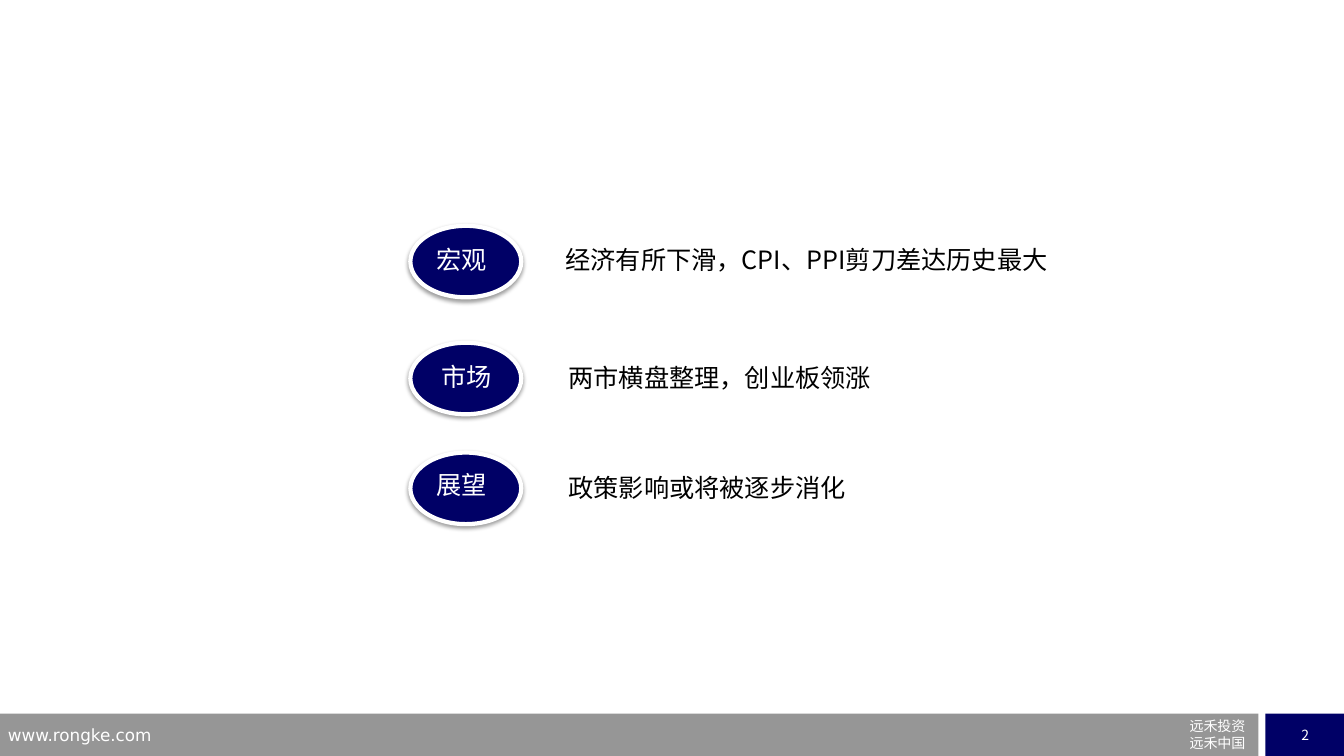
from dataclasses import dataclass

import pptx
import pptx.dml.color
import pptx.enum.shapes
import pptx.enum.text
import pptx.oxml
import pptx.oxml.ns
import pptx.util
from pptx.util import Inches

SHAPES = pptx.enum.shapes.MSO_SHAPE
ALIGN = pptx.enum.text.PP_ALIGN
ANCHOR = pptx.enum.text.MSO_ANCHOR


@dataclass(frozen=True)
class Theme:
    navy: str = "000066"
    grey: str = "969696"
    white: str = "FFFFFF"
    black: str = "000000"
    body_size: int = 18
    address_size: int = 12
    small_size: int = 10
    outline: int = 3
    body_font: str = "Noto Sans CJK SC"
    footer_font: str = "DejaVu Sans"


THEME = Theme()

# Oval top, label left and top, text left and top within the row, label, text
AGENDA = [
    (2.24, 0.16, 0.13, 1.44, 0.13, "宏观", "经济有所下滑，CPI、PPI剪刀差达历史最大"),
    (3.40, 0.21, 0.14, 1.47, 0.15, "市场", "两市横盘整理，创业板领涨"),
    (4.49, 0.16, 0.12, 1.47, 0.15, "展望", "政策影响或将被逐步消化"),
]


def color(value):
    return pptx.dml.color.RGBColor.from_string(value)


def write(paragraph, text, size, font, ink, align=ALIGN.LEFT):
    paragraph.alignment = align
    run = paragraph.add_run()
    run.text = text
    run.font.size = pptx.util.Pt(size)
    run.font.name = font
    run.font.color.rgb = color(ink)
    east_asian = pptx.oxml.parse_xml(
        f'<a:ea {pptx.oxml.ns.nsdecls("a")} typeface="{THEME.body_font}"/>')
    run.font._element.find(pptx.oxml.ns.qn("a:latin")).addnext(east_asian)


def add_text(slide, box, lines, size, font, ink, align=ALIGN.LEFT):
    shape = slide.shapes.add_textbox(*map(Inches, box))
    frame = shape.text_frame
    frame.word_wrap = True
    for index, line in enumerate(lines):
        paragraph = frame.add_paragraph() if index else frame.paragraphs[0]
        write(paragraph, line, size, font, ink, align)


def add_block(slide, kind, box, fill):
    shape = slide.shapes.add_shape(kind, *map(Inches, box))
    shape.shadow.inherit = False
    shape.fill.solid()
    shape.fill.fore_color.rgb = color(fill)
    shape.line.fill.background()
    return shape


def add_soft_shadow(shape):
    effects = shape._element.spPr.find(pptx.oxml.ns.qn("a:effectLst"))
    effects.append(pptx.oxml.parse_xml(
        f'<a:outerShdw {pptx.oxml.ns.nsdecls("a")} blurRad="40000" dist="20000" '
        f'dir="5400000" rotWithShape="0"><a:srgbClr val="{THEME.black}">'
        '<a:alpha val="38000"/></a:srgbClr></a:outerShdw>'))


def add_agenda_row(slide, left, top, label_at, text_at, label, text):
    oval = add_block(slide, SHAPES.OVAL, (left, top, 1.1, 0.71), THEME.navy)
    oval.line.color.rgb = color(THEME.white)
    oval.line.width = pptx.util.Pt(THEME.outline)
    add_soft_shadow(oval)
    add_text(slide, (left + label_at[0], top + label_at[1], 0.79, 0.4),
             [label], THEME.body_size, THEME.body_font, THEME.white)
    add_text(slide, (left + text_at[0], top + text_at[1], 5.05, 0.4),
             [text], THEME.body_size, THEME.body_font, THEME.black)


def add_footer(slide, top, height, page):
    add_block(slide, SHAPES.RECTANGLE, (0, top, 12.48, height), THEME.grey)
    add_text(slide, (-0.02, top + 0.06, 3.22, 0.26), ["www.rongke.com"],
             THEME.address_size, THEME.footer_font, THEME.white)
    add_text(slide, (10.95, top - 0.01, 1.5, 0.45), ["远禾投资", "远禾中国"],
             THEME.small_size, THEME.footer_font, THEME.white, ALIGN.RIGHT)
    badge = add_block(slide, SHAPES.RECTANGLE, (12.55, top, 0.79, height), THEME.navy)
    frame = badge.text_frame
    frame.word_wrap = False
    frame.vertical_anchor = ANCHOR.MIDDLE
    write(frame.paragraphs[0], page, THEME.small_size, THEME.body_font,
          THEME.white, ALIGN.CENTER)


def main():
    presentation = pptx.Presentation()
    presentation.slide_width = Inches(13.33)
    presentation.slide_height = Inches(7.5)
    slide = presentation.slides.add_slide(presentation.slide_layouts[6])
    add_footer(slide, 7.08, 0.42, "2")
    for top, label_x, label_y, text_x, text_y, label, text in AGENDA:
        add_agenda_row(slide, 4.07, top, (label_x, label_y), (text_x, text_y), label, text)
    presentation.save("out.pptx")


if __name__ == "__main__":
    main()
